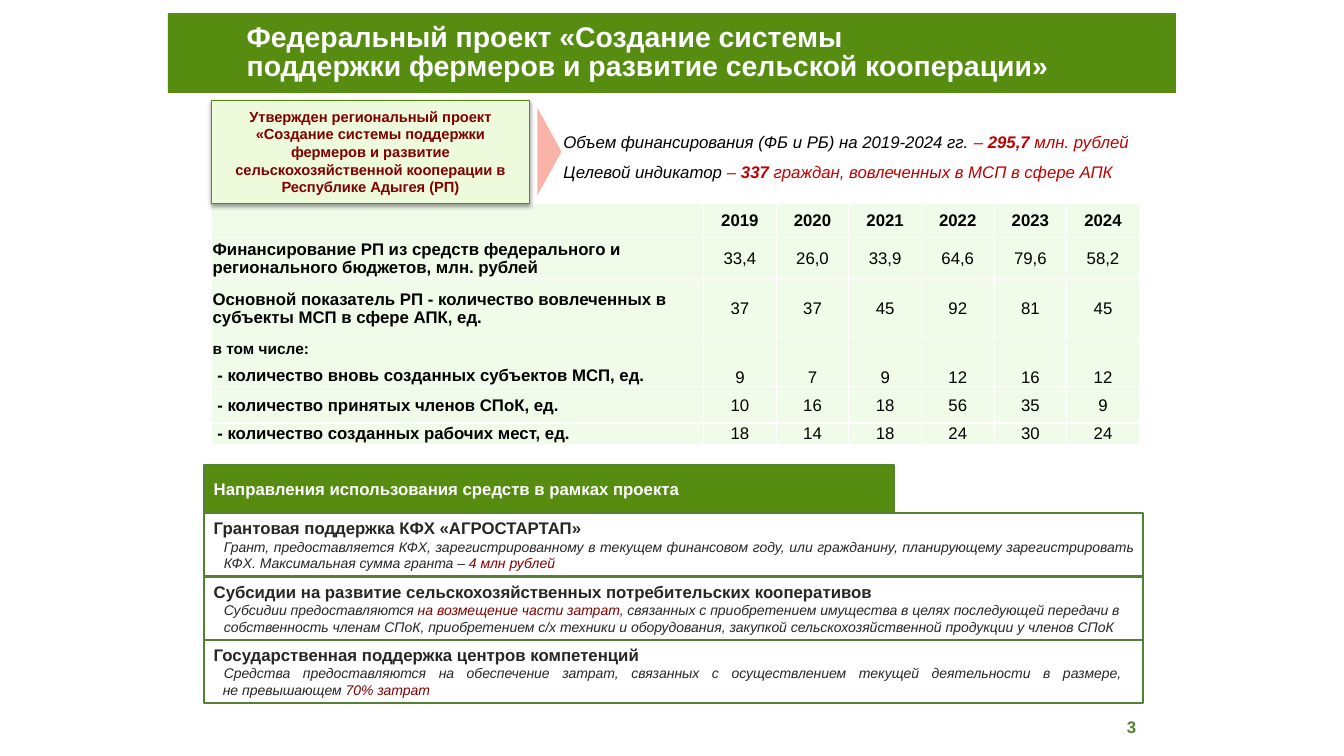
from dataclasses import dataclass

from lxml.etree import SubElement
from pptx import Presentation
from pptx.dml.color import RGBColor
from pptx.enum.shapes import MSO_SHAPE
from pptx.enum.text import MSO_ANCHOR, PP_ALIGN
from pptx.oxml.ns import qn
from pptx.util import Pt

WHITE = RGBColor(0xFF, 0xFF, 0xFF)
BLACK = RGBColor(0, 0, 0)
GREEN = RGBColor(0x56, 0x8D, 0x11)
DARK = RGBColor(0x54, 0x82, 0x35)
PALE = RGBColor(0xF1, 0xFB, 0xE9)
LIME = RGBColor(0xED, 0xFB, 0xDC)
PINK = RGBColor(0xF9, 0xB3, 0xA7)
RED = RGBColor(0xC0, 0, 0)
MAROON = RGBColor(0x80, 0, 0)
INK = RGBColor(0x26, 0x26, 0x26)


@dataclass
class Box:
    left: float
    top: float
    width: float
    height: float
    fill: RGBColor
    line: RGBColor | None = None
    weight: float = 1.5
    kind: MSO_SHAPE = MSO_SHAPE.RECTANGLE


@dataclass
class Grant:
    title: str
    terms: list[tuple[str, RGBColor]]
    align: PP_ALIGN = PP_ALIGN.JUSTIFY
    left: float = 7.2
    indent: float = 0


@dataclass
class Row:
    height: float
    label: str
    values: list[str]
    anchor: MSO_ANCHOR = MSO_ANCHOR.MIDDLE


GRANTS = [
    Grant("Грантовая поддержка КФХ «АГРОСТАРТАП»", [
        ("Грант, предоставляется КФХ, зарегистрированному в текущем финансовом году, "
         "или гражданину, планирующему зарегистрировать КФХ. "
         "Максимальная сумма гранта – ", INK),
        ("4 млн рублей", MAROON)]),
    Grant("Субсидии на развитие сельскохозяйственных потребительских кооперативов", [
        ("Субсидии предоставляются ", INK),
        ("на возмещение части затрат", MAROON),
        (", связанных с приобретением имущества в целях последующей передачи в "
         "собственность членам СПоК, приобретением с/х техники и оборудования, "
         "закупкой сельскохозяйственной продукции у членов СПоК", INK)],
        align=PP_ALIGN.LEFT),
    Grant("Государственная поддержка центров компетенций", [
        ("Средства предоставляются на обеспечение затрат, связанных с осуществлением "
         "текущей деятельности в размере, \nне превышающем ", INK),
        ("70% затрат", MAROON)], left=6.5, indent=0.7),
]

ROWS = [
    Row(24.2, "", ["2019", "2020", "2021", "2022", "2023", "2024"]),
    Row(28.4, "Финансирование РП из средств федерального и регионального бюджетов, "
        "млн. рублей", ["33,4", "26,0", "33,9", "64,6", "79,6", "58,2"]),
    Row(41.8, "Основной показатель РП - количество вовлеченных в субъекты МСП "
        "в сфере АПК, ед.", ["37", "37", "45", "92", "81", "45"]),
    Row(35.3, "в том числе:\n - количество вновь созданных субъектов МСП, ед.",
        ["9", "7", "9", "12", "16", "12"], MSO_ANCHOR.BOTTOM),
    Row(25.9, " - количество принятых членов СПоК, ед.",
        ["10", "16", "18", "56", "35", "9"]),
    Row(15.1, " - количество созданных рабочих мест, ед.",
        ["18", "14", "18", "24", "30", "24"]),
]


def write(para, text: str, *, size: float = 12, color: RGBColor = BLACK,
          bold: bool = False, italic: bool = False) -> None:
    for num, line in enumerate(text.split("\n")):
        if num:
            para.add_line_break()
        run = para.add_run()
        run.text = line
        font = run.font
        font.name, font.size = "Arial", Pt(size)
        font.bold, font.italic = bold, italic
        font.color.rgb = color


def start(frame, first: bool = False, align: PP_ALIGN = PP_ALIGN.LEFT,
          left: float = 0, indent: float = 0):
    """Return the first paragraph of a frame, or a new one, laid out."""
    para = frame.paragraphs[0] if first else frame.add_paragraph()
    para.alignment = align
    if left:
        props = para._p.get_or_add_pPr()
        props.set("marL", str(Pt(left)))
        props.set("indent", str(Pt(indent)))
    return para


def draw(slide, box: Box):
    shape = slide.shapes.add_shape(box.kind, Pt(box.left), Pt(box.top),
                                   Pt(box.width), Pt(box.height))
    shape.shadow.inherit = False
    shape.fill.solid()
    shape.fill.fore_color.rgb = box.fill
    if box.line is None:
        shape.line.fill.background()
    else:
        shape.line.color.rgb = box.line
        shape.line.width = Pt(box.weight)
    shape.text_frame.word_wrap = True
    shape.text_frame.vertical_anchor = MSO_ANCHOR.MIDDLE
    return shape


def shade(shape) -> None:
    """Add a soft shadow below the shape."""
    effects = shape._element.spPr.find(qn("a:effectLst"))
    outer = SubElement(effects, qn("a:outerShdw"), blurRad=str(Pt(3.1)),
                       dist=str(Pt(1.6)), dir="5400000", rotWithShape="0")
    color = SubElement(outer, qn("a:srgbClr"), val=str(BLACK))
    SubElement(color, qn("a:alpha"), val="38000")


def finish(cell, anchor: MSO_ANCHOR) -> None:
    """Set borders, fill, margins and anchor of a cell."""
    props = cell._tc.get_or_add_tcPr()
    for side in "LRTB":
        line = SubElement(props, qn(f"a:ln{side}"), w=str(Pt(1)))
        fill = SubElement(line, qn("a:solidFill"))
        SubElement(fill, qn("a:srgbClr"), val=str(WHITE))
    cell.fill.solid()
    cell.fill.fore_color.rgb = PALE
    cell.margin_left = cell.margin_right = cell.margin_top = Pt(0.7)
    cell.margin_bottom = 0
    cell.vertical_anchor = anchor


def tabulate(slide) -> None:
    widths = [351.4] + [51.9] * 6
    table = slide.shapes.add_table(
        len(ROWS), len(widths), Pt(151.2), Pt(145.5), Pt(sum(widths)),
        Pt(sum(row.height for row in ROWS))).table
    table.first_row = table.horz_banding = False
    for column, width in zip(table.columns, widths):
        column.width = Pt(width)
    for r, row in enumerate(ROWS):
        table.rows[r].height = Pt(row.height)
        label = table.cell(r, 0)
        finish(label, MSO_ANCHOR.MIDDLE)
        lines = row.label.split("\n") if row.label else []
        for num, line in enumerate(lines):
            para = start(label.text_frame, num == 0)
            if num:
                para.space_before = Pt(5.75)
            write(para, line, size=11 if line.endswith(":") else 12, bold=True)
        for c, value in enumerate(row.values, 1):
            cell = table.cell(r, c)
            finish(cell, row.anchor)
            write(start(cell.text_frame, True, PP_ALIGN.CENTER), value, bold=r == 0)


def main() -> None:
    deck = Presentation()
    deck.slide_width, deck.slide_height = Pt(960), Pt(540)
    slide = deck.slides.add_slide(deck.slide_layouts[6])

    number = slide.shapes.add_textbox(Pt(797.8), Pt(508.3), Pt(20.9), Pt(21.6))
    number.text_frame.word_wrap = False
    write(start(number.text_frame, True), "3", color=DARK, bold=True)

    goals = draw(slide, Box(395.3, 88.6, 419, 39.6, WHITE)).text_frame
    facts = [("Объем финансирования (ФБ и РБ) на 2019-2024 гг. ", "– ", "295,7",
              " млн. рублей"),
             ("Целевой индикатор", " – ", "337",
              " граждан, вовлеченных в МСП в сфере АПК")]
    for num, (lead, dash, value, tail) in enumerate(facts):
        para = start(goals, num == 0)
        para.line_spacing = 1.5
        write(para, lead, italic=True)
        write(para, dash, color=RED, italic=True)
        write(para, value, color=RED, bold=True, italic=True)
        write(para, tail, color=RED, italic=True)

    tabulate(slide)

    title = draw(slide, Box(120, 9.4, 720, 56.9, GREEN)).text_frame
    title.margin_left = Pt(56.2)
    title.margin_right = title.margin_top = title.margin_bottom = 0
    for num, line in enumerate(["Федеральный проект «Создание системы",
                                "поддержки фермеров и развитие сельской кооперации»"]):
        para = start(title, num == 0)
        para.line_spacing = 0.85
        write(para, line, size=20.3, color=WHITE, bold=True)

    plan = draw(slide, Box(151.2, 71.5, 227, 73.6, LIME, GREEN, 0.75))
    shade(plan)
    write(start(plan.text_frame, True, PP_ALIGN.CENTER),
          "Утвержден региональный проект «Создание системы поддержки фермеров и "
          "развитие сельскохозяйственной кооперации в Республике Адыгея (РП)",
          size=10.5, color=MAROON, bold=True)

    arrow = draw(slide, Box(383.8, 77, 17.3, 62.6, PINK, kind=MSO_SHAPE.RIGHT_ARROW))
    arrow.adjustments[0], arrow.adjustments[1] = 0.5, 1

    header = draw(slide, Box(145.6, 332.2, 493.1, 34.2, GREEN, DARK)).text_frame
    write(start(header, True), "Направления использования средств в рамках проекта",
          color=WHITE, bold=True)

    for num, grant in enumerate(GRANTS):
        frame = draw(slide, Box(145.6, 366.5 + 45.3 * num, 671, 45.3,
                                WHITE, DARK)).text_frame
        write(start(frame, True, left=20.9, indent=-20.9), grant.title,
              color=INK, bold=True)
        para = start(frame, align=grant.align, left=grant.left, indent=grant.indent)
        for text, color in grant.terms:
            write(para, text, size=10, color=color, italic=True)

    deck.save("out.pptx")


if __name__ == "__main__":
    main()
